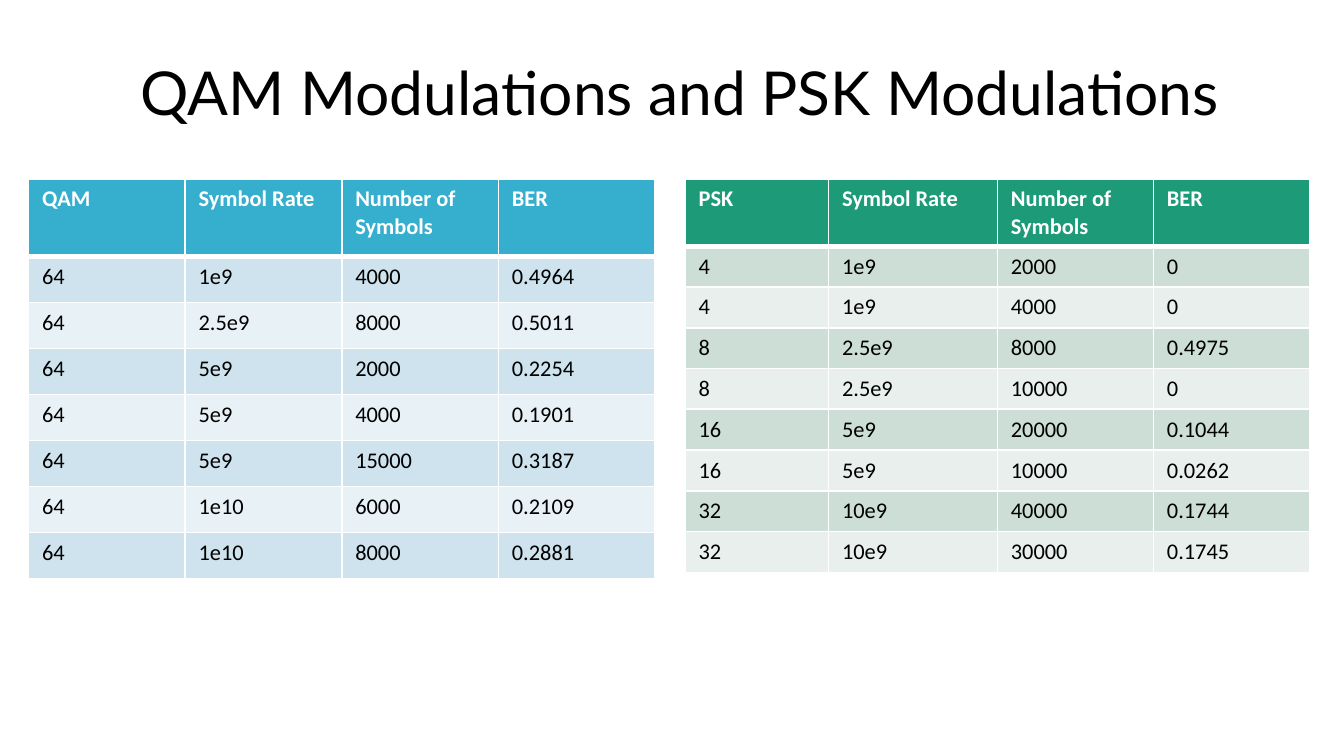
from lxml import etree
from pptx import Presentation
from pptx.dml.color import RGBColor
from pptx.enum import text
from pptx.oxml.ns import qn
from pptx.util import Cm, Pt

WHITE = RGBColor(0xFF, 0xFF, 0xFF)
BLACK = RGBColor(0, 0, 0)
BLUE = RGBColor(0x36, 0xAF, 0xCE)
BLUE_BANDS = RGBColor(0xCE, 0xE3, 0xED), RGBColor(0xE8, 0xF2, 0xF6)
GREEN = RGBColor(0x1D, 0x9A, 0x78)
GREEN_BANDS = RGBColor(0xCD, 0xDE, 0xD6), RGBColor(0xE8, 0xEF, 0xEC)

QAM = [
    ("QAM", "Symbol Rate", "Number of Symbols", "BER"),
    ("64", "1e9", "4000", "0.4964"),
    ("64", "2.5e9", "8000", "0.5011"),
    ("64", "5e9", "2000", "0.2254"),
    ("64", "5e9", "4000", "0.1901"),
    ("64", "5e9", "15000", "0.3187"),
    ("64", "1e10", "6000", "0.2109"),
    ("64", "1e10", "8000", "0.2881"),
]
PSK = [
    ("PSK", "Symbol Rate", "Number of Symbols", "BER"),
    ("4", "1e9", "2000", "0"),
    ("4", "1e9", "4000", "0"),
    ("8", "2.5e9", "8000", "0.4975"),
    ("8", "2.5e9", "10000", "0"),
    ("16", "5e9", "20000", "0.1044"),
    ("16", "5e9", "10000", "0.0262"),
    ("32", "10e9", "40000", "0.1744"),
    ("32", "10e9", "30000", "0.1745"),
]


def add_border(cell, side, points):
    line = etree.SubElement(cell._tc.get_or_add_tcPr(), qn(f"a:ln{side}"), w=str(Pt(points)))
    fill = etree.SubElement(line, qn("a:solidFill"))
    etree.SubElement(fill, qn("a:srgbClr"), val=str(WHITE))


def add_results(slide, rows, left, widths, header_height, row_height, header_fill, bands):
    height = header_height + row_height * (len(rows) - 1)
    frame = slide.shapes.add_table(
        len(rows), len(widths), Cm(left), Cm(3.38), Cm(sum(widths)), Cm(height))
    results = frame.table
    for column, width in zip(results.columns, widths):
        column.width = Cm(width)
    for r, values in enumerate(rows):
        results.rows[r].height = Cm(row_height if r else header_height)
        for c, value in enumerate(values):
            cell = results.cell(r, c)
            for side in "LRTB":
                under_header = (r, side) in ((0, "B"), (1, "T"))
                add_border(cell, side, 3 if under_header else 1)
            cell.fill.solid()
            cell.fill.fore_color.rgb = bands[(r - 1) % 2] if r else header_fill
            cell.text = value
            font = cell.text_frame.paragraphs[0].font
            font.name = "Calibri"
            font.size = Pt(12)
            font.bold = r == 0
            font.color.rgb = BLACK if r else WHITE


deck = Presentation()
deck.slide_width = Cm(25.4)
deck.slide_height = Cm(14.28)
slide = deck.slides.add_slide(deck.slide_layouts[6])

title = slide.shapes.add_textbox(Cm(2.41), Cm(0.43), Cm(21.9), Cm(2.77)).text_frame
title.word_wrap = True
title.vertical_anchor = text.MSO_ANCHOR.MIDDLE
heading = title.paragraphs[0]
heading.text = "QAM Modulations and PSK Modulations"
heading.line_spacing = 0.9
heading.font.name = "Lato"
heading.font.size = Pt(32.4)
heading.font.color.rgb = BLACK

add_results(slide, QAM, 0.54, [2.96] * 4, 1.46, 0.87, BLUE, BLUE_BANDS)
add_results(slide, PSK, 12.95, [2.71, 3.19, 2.95, 2.95], 1.24, 0.77, GREEN, GREEN_BANDS)

deck.save("out.pptx")
